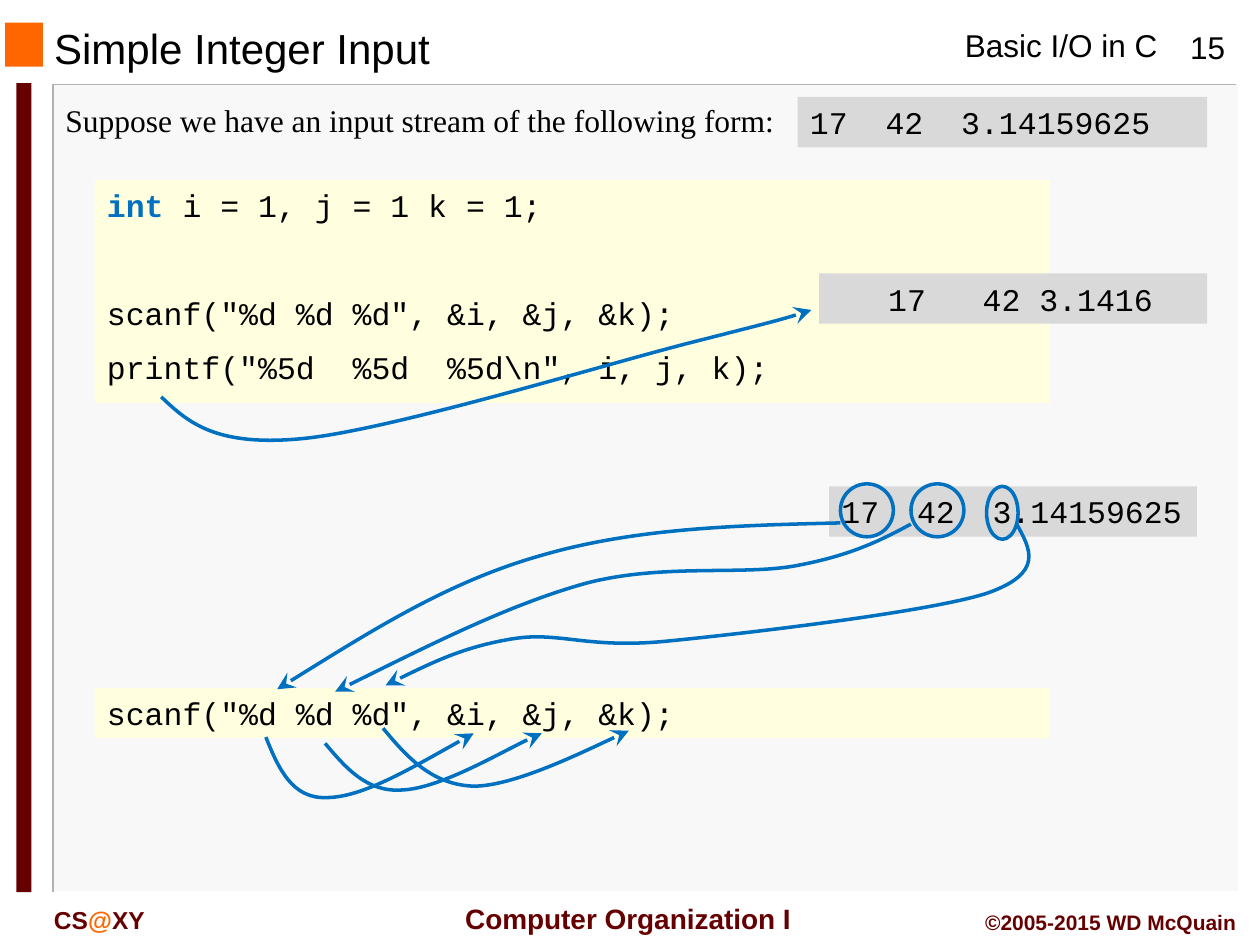
from dataclasses import dataclass

from lxml.etree import SubElement
from pptx import Presentation
from pptx.dml.color import RGBColor
from pptx.enum.shapes import MSO_SHAPE
from pptx.enum.text import MSO_ANCHOR, MSO_AUTO_SIZE, PP_ALIGN
from pptx.oxml.ns import qn
from pptx.util import Inches, Pt


@dataclass(frozen=True)
class Theme:
    black: str = "000000"
    white: str = "FFFFFF"
    panel: str = "F8F8F8"
    edge: str = "B2B2B2"
    orange: str = "FF6600"
    maroon: str = "660000"
    blue: str = "0070C0"
    stream: str = "D9D9D9"
    code: str = "FFFFE0"
    sans: str = "Arial"
    serif: str = "Times New Roman"
    mono: str = "Courier New"
    title: int = 24
    body: int = 18
    course: int = 16
    school: int = 14
    credit: int = 12


theme = Theme()
rgb = RGBColor.from_string

presentation = Presentation()
presentation.slide_width, presentation.slide_height = Inches(10), Inches(7.5)
slide = presentation.slides.add_slide(presentation.slide_layouts[5])
shapes = slide.shapes


def add_text(box, lines, font=theme.mono, size=theme.body, color=theme.black,
             bold=False, align=PP_ALIGN.LEFT, fill=None, wrap=True):
    """Add a text box; each line is a list of (text, color, bold) runs or a string."""
    shape = shapes.add_textbox(*map(Inches, box))
    if fill:
        shape.fill.solid()
        shape.fill.fore_color.rgb = rgb(fill)
    frame = shape.text_frame
    frame.word_wrap = wrap
    for index, line in enumerate(lines):
        paragraph = frame.add_paragraph() if index else frame.paragraphs[0]
        paragraph.alignment = align
        paragraph.font.name, paragraph.font.size = font, Pt(size)
        runs = [(line, color, bold)] if isinstance(line, str) else line
        for text, run_color, run_bold in runs:
            run = paragraph.add_run()
            run.text = text
            run.font.color.rgb = rgb(run_color)
            run.font.bold = run_bold
    return frame


def add_outline(points, color, width, arrow=False):
    """Draw an open line; an arrow reads its points as cubic Bézier curves."""
    corners = [(Inches(x), Inches(y)) for x, y in points]
    builder = shapes.build_freeform(*corners[0])
    builder.add_line_segments(corners[1:], close=False)
    shape = builder.convert_to_shape()
    shape.shadow.inherit = False
    shape.fill.background()
    shape.line.color.rgb = rgb(color)
    shape.line.width = Pt(width)
    if arrow:
        segments = list(shape.element.iter(qn("a:lnTo")))
        for start in range(0, len(segments), 3):
            curve = segments[start].makeelement(qn("a:cubicBezTo"))
            segments[start].addprevious(curve)
            for segment in segments[start:start + 3]:
                curve.append(segment[0])
                segment.getparent().remove(segment)
        SubElement(shape.element.spPr.find(qn("a:ln")), qn("a:tailEnd"),
                   type="stealth", w="lg", len="lg")


# Frame
for box, color in [
    ((0.43, 0.67, 9.4, 6.41), theme.panel),
    ((0.04, 0.18, 0.3, 0.35), theme.orange),
    ((0.13, 0.66, 0.12, 6.42), theme.maroon),
]:
    block = shapes.add_shape(MSO_SHAPE.RECTANGLE, *map(Inches, box))
    block.shadow.inherit = False
    block.fill.solid()
    block.fill.fore_color.rgb = rgb(color)
    block.line.fill.background()
add_outline([(9.81, 0.67), (0.42, 0.67), (0.42, 7.08)], theme.edge, 1)
add_outline([(9.83, 0.67), (9.83, 7.08), (0.44, 7.08)], theme.white, 1)

# Header and footer
title = shapes.title
title.left, title.top, title.width, title.height = map(Inches, (0.33, 0.19, 6.33, 0.38))
title.text_frame.text = "Simple Integer Input"
title.text_frame.auto_size = MSO_AUTO_SIZE.NONE
title.text_frame.vertical_anchor = MSO_ANCHOR.MIDDLE
heading = title.text_frame.paragraphs[0]
heading.alignment = PP_ALIGN.LEFT
heading.font.name, heading.font.size = theme.sans, Pt(theme.title)
heading.font.color.rgb = rgb(theme.black)

add_text((7.56, 0.16, 1.75, 0.4), ["Basic I/O in C"], theme.sans, wrap=False)
add_text((9.25, 0.17, 0.67, 0.4), ["15"], theme.sans, align=PP_ALIGN.CENTER)
add_text((3.53, 7.11, 2.91, 0.37), ["Computer Organization I"], theme.sans, theme.course,
         theme.maroon, True, PP_ALIGN.CENTER, wrap=False)
add_text((0.33, 7.13, 1.5, 0.33),
         [[("CS", theme.maroon, True), ("@", theme.orange, True), ("XY", theme.maroon, True)]],
         theme.sans, theme.school)
add_text((7.33, 7.17, 2.58, 0.3), ["©2005-2015 WD McQuain"], theme.sans, theme.credit,
         theme.maroon, True, PP_ALIGN.RIGHT)

# Input stream, code and output
stream_text = "17  42  3.14159625"
scanf_text = 'scanf("%d %d %d", &i, &j, &k);'
add_text((0.42, 0.75, 9.25, 0.4),
         ["Suppose we have an input stream of the following form:"], theme.serif)
add_text((6.33, 0.77, 3.25, 0.4), [stream_text], fill=theme.stream)
add_text((6.58, 3.86, 2.92, 0.4), [stream_text], fill=theme.stream)
code = add_text((0.75, 1.43, 7.58, 1.77), [
    [("int ", theme.blue, True), ("i = 1, j = 1 k = 1;", theme.black, False)],
    scanf_text,
    r'printf("%5d  %5d  %5d\n", i, j, k);',
], fill=theme.code)
for paragraph, gap in zip(code.paragraphs[1:], (40, 9)):
    paragraph.space_before = Pt(gap)
add_text((6.5, 2.17, 3.08, 0.4), ["   17   42 3.1416"], fill=theme.stream)
add_text((0.75, 5.46, 7.58, 0.4), [scanf_text], fill=theme.code)

# Arrows
format_to_variable = [
    [(2.11, 5.85), (2.21, 6.1), (2.32, 6.34), (2.59, 6.33),
     (2.87, 6.33), (3.31, 6.07), (3.76, 5.82)],
    [(2.58, 5.9), (2.74, 6.09), (2.91, 6.29), (3.19, 6.27),
     (3.48, 6.26), (4.12, 5.89), (4.3, 5.82)],
    [(3.04, 5.78), (3.23, 6.01), (3.43, 6.23), (3.76, 6.24),
     (4.08, 6.24), (4.99, 5.8), (4.99, 5.8)],
]
stream_to_format = [
    [(6.67, 4.15), (5.85, 4.17), (5.04, 4.19), (4.29, 4.41),
     (3.55, 4.62), (2.88, 5.05), (2.2, 5.47)],
    [(7.23, 4.16), (6.99, 4.29), (6.75, 4.41), (6.32, 4.49), (5.89, 4.57),
     (5.26, 4.47), (4.65, 4.63), (4.04, 4.8), (3.35, 5.15), (2.66, 5.49)],
    [(8.07, 4.16), (8.18, 4.36), (8.29, 4.55), (7.83, 4.71), (7.36, 4.86),
     (5.9, 5.03), (5.28, 5.09), (4.65, 5.15), (4.44, 5.01), (4.07, 5.07),
     (3.7, 5.13), (3.38, 5.28), (3.06, 5.44)],
]
printf_to_output = [
    (1.28, 3.15), (1.49, 3.35), (1.71, 3.55), (2.41, 3.48), (3.11, 3.41),
    (4.81, 2.89), (5.48, 2.72), (6.15, 2.55), (6.3, 2.51), (6.44, 2.46),
]
for points in [*format_to_variable, *stream_to_format, printf_to_output]:
    add_outline(points, theme.blue, 2, arrow=True)

# Rings around the values that are read
for left, top, width in [(6.67, 3.84, 0.42), (7.23, 3.84, 0.42), (7.83, 3.86, 0.25)]:
    ring = shapes.add_shape(MSO_SHAPE.OVAL, *map(Inches, (left, top, width, 0.42)))
    ring.shadow.inherit = False
    ring.fill.background()
    ring.line.color.rgb = rgb(theme.blue)
    ring.line.width = Pt(2)

presentation.save("out.pptx")
